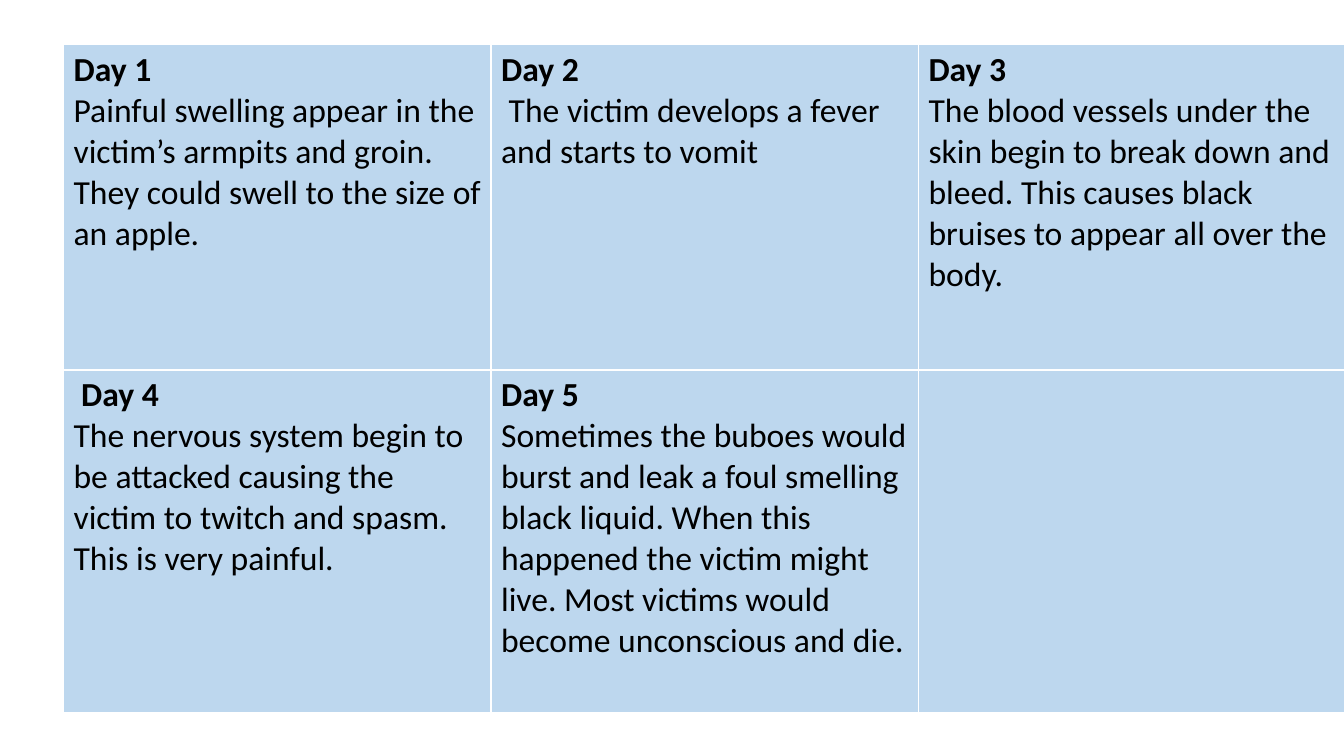
from lxml import etree
from pptx import Presentation
from pptx.dml.color import RGBColor
from pptx.oxml.ns import qn
from pptx.util import Inches, Pt

BLANK_LAYOUT = 6
BORDER_SIDES = ("a:lnL", "a:lnR", "a:lnT", "a:lnB")

DAYS = [
    [
        ("Day 1", "Painful swelling appear in the victim’s armpits and groin. "
                  "They could swell to the size of an apple."),
        ("Day 2", " The victim develops a fever and starts to vomit"),
        ("Day 3", "The blood vessels under the skin begin to break down and bleed. "
                  "This causes black bruises to appear all over the body."),
    ],
    [
        (" Day 4", "The nervous system begin to be attacked causing the victim "
                   "to twitch and spasm. This is very painful."),
        ("Day 5", "Sometimes the buboes would burst and leak a foul smelling black "
                  "liquid. When this happened the victim might live. "
                  "Most victims would become unconscious and die."),
        None,
    ],
]


def color(hex_code):
    return RGBColor.from_string(hex_code)


def write(para, text, size=24, font="Calibri", ink="000000", bold=False):
    span = para.add_run()
    span.text = text
    span.font.size = Pt(size)
    span.font.name = font
    span.font.bold = bold
    span.font.color.rgb = color(ink)


class SymptomPage:
    """Holds the table style and the current slide."""

    fill = "BDD7EE"
    border = "FFFFFF"
    border_width = Pt(1)

    def __init__(self, deck):
        self.page = deck.slides.add_slide(deck.slide_layouts[BLANK_LAYOUT])

    def outline(self, cell):
        """Draw the cell borders, which must come before the fill in the XML."""
        properties = cell._tc.get_or_add_tcPr()
        for position, side in enumerate(BORDER_SIDES):
            line = etree.Element(qn(side), w=str(self.border_width))
            solid = etree.SubElement(line, qn("a:solidFill"))
            etree.SubElement(solid, qn("a:srgbClr"), val=self.border)
            properties.insert(position, line)

    def fill_cell(self, cell, day):
        cell.fill.solid()
        cell.fill.fore_color.rgb = color(self.fill)
        self.outline(cell)
        if day:
            heading, symptoms = day
            write(cell.text_frame.paragraphs[0], heading, bold=True)
            write(cell.text_frame.add_paragraph(), symptoms)

    def add_table(self, days, left, top, column_width, row_heights):
        columns = len(days[0])
        table = self.page.shapes.add_table(
            len(days), columns, Inches(left), Inches(top),
            Inches(column_width * columns), Inches(sum(row_heights))).table
        for column in table.columns:
            column.width = Inches(column_width)
        for row, height, row_days in zip(table.rows, row_heights, days):
            row.height = Inches(height)
            for cell, day in zip(row.cells, row_days):
                self.fill_cell(cell, day)


def main():
    deck = Presentation()
    deck.slide_width = Inches(13.33)
    deck.slide_height = Inches(7.5)
    page = SymptomPage(deck)
    page.add_table(DAYS, left=0.63, top=0.44, column_width=4.24,
                   row_heights=(3.23, 3.4))
    deck.save("out.pptx")


if __name__ == "__main__":
    main()
